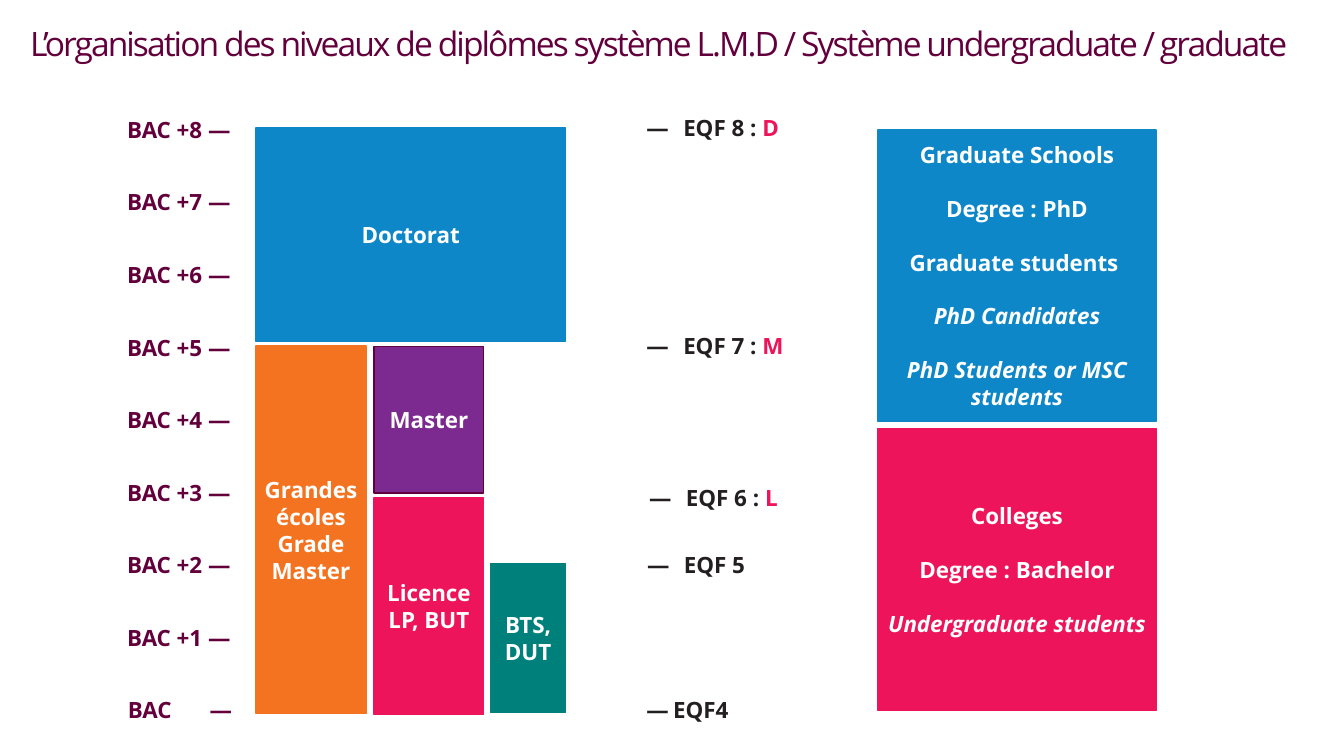
from pptx import Presentation
from pptx.dml.color import RGBColor
from pptx.enum.shapes import MSO_SHAPE as SHAPE
from pptx.enum.text import MSO_ANCHOR as ANCHOR, MSO_AUTO_SIZE as AUTO, PP_ALIGN as ALIGN
from pptx.oxml.ns import qn
from pptx.util import Pt
from lxml.etree import SubElement

COLORS = {
    "plum": "63003C", "ink": "231F20", "white": "FFFFFF", "blue": "0E87C9",
    "purple": "7C2A90", "pink": "ED145B", "orange": "F37320", "teal": "00807A",
}
DASH_SPACING = 3.1
BAC_TOP, YEAR_STEP = 82.1, 51.84
BLANK_LINE = 19.2


class DiplomaSlide:
    """Draws the diploma level diagram on one slide in a shared style."""

    def __init__(self, prs, font="Open Sans", size=16):
        self.s = prs.slides.add_slide(prs.slide_layouts[5])
        self.font, self.size = font, size

    def color(self, name):
        return RGBColor.from_string(COLORS[name])

    def style(self, r, color, size=None, bold=True, italic=False, spacing=0):
        r.font.name, r.font.size = self.font, Pt(size or self.size)
        r.font.bold, r.font.italic = bold, italic
        r.font.color.rgb = self.color(color)
        if spacing:
            r._r.get_or_add_rPr().set("spc", str(round(spacing * 100)))

    def frame(self, sp, inset, top, anchor):
        tf = sp.text_frame
        tf.word_wrap, tf.auto_size, tf.vertical_anchor = True, AUTO.NONE, anchor
        tf.margin_left = tf.margin_right = tf.margin_bottom = Pt(inset)
        tf.margin_top = Pt(top)
        return tf

    def title(self, text, x, y, w, h):
        sp = self.s.shapes.title
        sp.left, sp.top, sp.width, sp.height = Pt(x), Pt(y), Pt(w), Pt(h)
        tf = self.frame(sp, 0, 0.7, ANCHOR.MIDDLE)
        tf.text = text
        p = tf.paragraphs[0]
        p.alignment, p.line_spacing, p.space_before = ALIGN.LEFT, 0.9, Pt(0.6)
        self.style(p.runs[0], "plum", size=24, bold=False, spacing=-1.4)

    def label(self, x, y, w, runs, tab=None):
        sp = self.s.shapes.add_textbox(Pt(x), Pt(y), Pt(w), Pt(20.2))
        p = self.frame(sp, 0, 0.7, ANCHOR.TOP).paragraphs[0]
        p.space_before = Pt(0.8)
        if tab:
            tabs = SubElement(p._p.get_or_add_pPr(), qn("a:tabLst"))
            SubElement(tabs, qn("a:tab"), pos=str(Pt(tab)), algn="l")
        for text, color in runs:
            r = p.add_run()
            r.text = text
            self.style(r, color, spacing=DASH_SPACING if "—" in text else 0)

    def block(self, x, y, w, h, fill, lines, line=None, gap=0, italic_from=99):
        sp = self.s.shapes.add_shape(SHAPE.RECTANGLE, Pt(x), Pt(y), Pt(w), Pt(h))
        sp.shadow.inherit = False
        sp.fill.solid()
        sp.fill.fore_color.rgb = self.color(fill)
        sp.line.color.rgb = self.color(line or fill)
        sp.line.width = Pt(1)
        tf = self.frame(sp, 4.3, 4.3, ANCHOR.MIDDLE)
        tf.text = "\n".join(lines)
        for i, p in enumerate(tf.paragraphs):
            p.alignment = ALIGN.CENTER
            p.space_before = Pt(gap if i else 0)
            self.style(p.runs[0], "white", italic=i >= italic_from)


def main():
    prs = Presentation()
    prs.slide_width, prs.slide_height = Pt(960), Pt(540)
    d = DiplomaSlide(prs)
    d.title("L’organisation des niveaux de diplômes système L.M.D / "
            "Système undergraduate / graduate", 21.6, 18.7, 905.8, 26.6)

    for year in range(8, 0, -1):
        d.label(90.9, BAC_TOP + (8 - year) * YEAR_STEP, 91,
                [(f"BAC +{year} ", "plum"), ("—", "plum")])
    d.label(91.4, BAC_TOP + 8 * YEAR_STEP, 91,
            [("BAC\t", "plum"), ("—", "plum")], tab=58.3)

    for x, y, dash, level, cycle in [
        (461.8, 80.6, "— ", "EQF 8 : ", "D"),
        (461.8, 236.2, "— ", "EQF 7 : ", "M"),
        (463.7, 344.9, "— ", "EQF 6 : ", "L"),
        (462.2, 393.1, "— ", "EQF 5", ""),
        (461.8, 496.8, "—", "EQF4", ""),
    ]:
        runs = [(dash, "ink"), (level, "ink"), (cycle, "pink")]
        d.label(x, y, 108, [run for run in runs if run[0]])

    d.block(182.9, 91.4, 221, 152.6, "blue", ["Doctorat"])
    d.block(267.1, 247.7, 78.5, 104.4, "purple", ["Master"], line="plum")
    d.block(267.1, 355.7, 78.5, 154.8, "pink", ["Licence", "LP, BUT"])
    d.block(182.9, 247, 78.5, 262.8, "orange", ["Grandes écoles", "Grade Master"])
    d.block(350.6, 402.5, 53.3, 106.6, "teal", ["BTS, DUT"])
    d.block(627.1, 92.9, 198.7, 208.1, "blue",
            ["Graduate Schools", "Degree : PhD", "Graduate students ",
             "PhD Candidates", "PhD Students or MSC students"],
            gap=BLANK_LINE, italic_from=3)
    d.block(627.1, 306, 198.7, 201.6, "pink",
            ["Colleges", "Degree : Bachelor", "Undergraduate students"],
            gap=BLANK_LINE, italic_from=2)
    prs.save("out.pptx")


if __name__ == "__main__":
    main()
